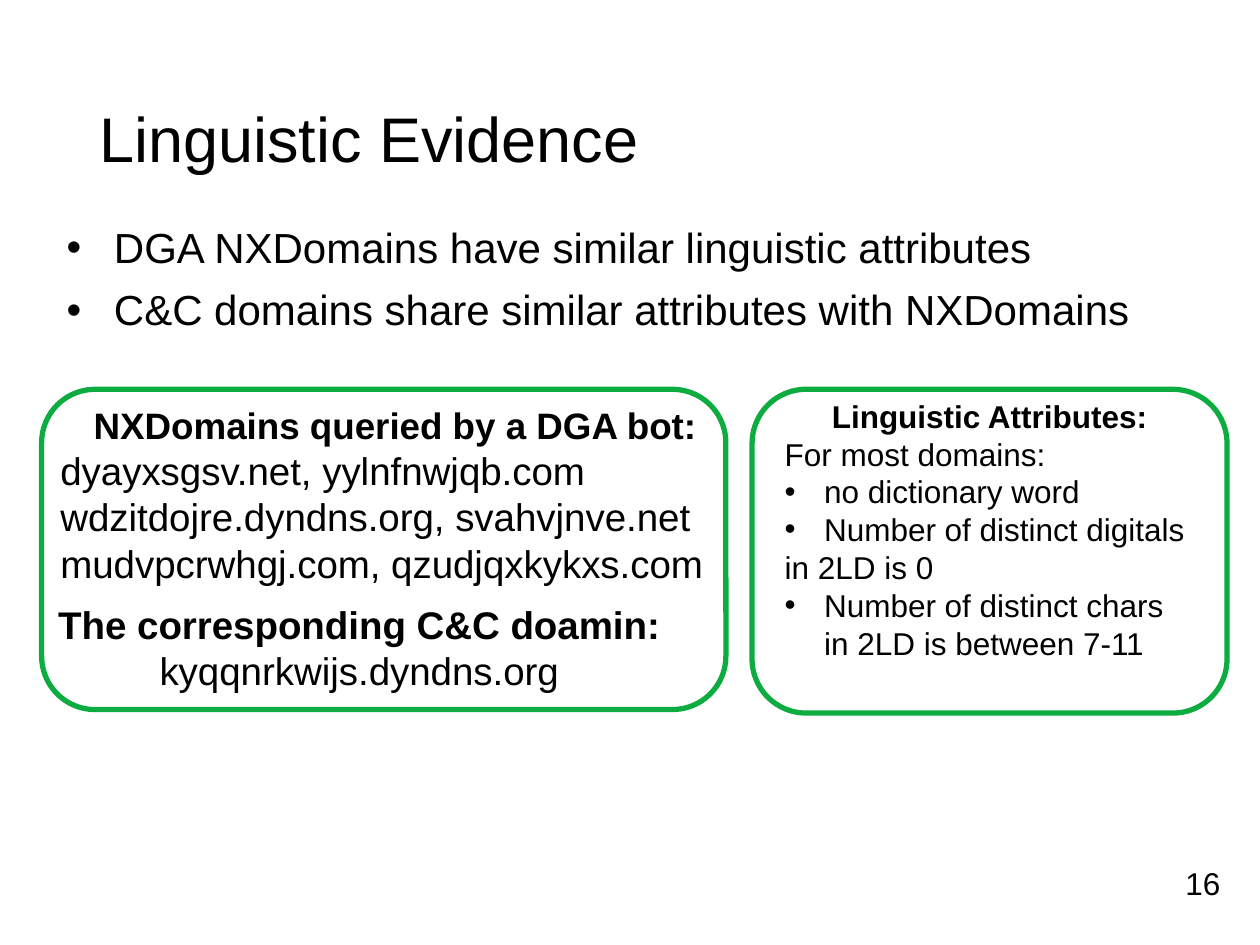
from dataclasses import dataclass

from lxml.etree import SubElement
from pptx import Presentation
from pptx.dml.color import RGBColor
from pptx.enum.shapes import MSO_SHAPE as Preset
from pptx.enum.text import MSO_ANCHOR as Anchor, PP_ALIGN as Align
from pptx.oxml.ns import qn
from pptx.util import Pt


@dataclass(frozen=True)
class Theme:
    font: str = "Arial"
    ink: RGBColor = RGBColor(0, 0, 0)
    green: RGBColor = RGBColor(0x0D, 0xAC, 0x40)
    title: float = 36
    body: float = 24
    domain: float = 22
    heading: float = 21
    small: float = 18
    border: float = 3


THEME = Theme()


def set_bullet(para, indent):
    props = para._p.get_or_add_pPr()
    props.set("marL", str(Pt(indent)))
    props.set("indent", str(-Pt(indent)))
    SubElement(props, qn("a:buFont"), typeface=THEME.font)
    SubElement(props, qn("a:buChar"), char="•")


def add_text(page, box, lines, wrap=True, anchor=Anchor.TOP):
    """Each line is (text, size, options); options may hold bold, bullet and paragraph format."""
    frame = page.shapes.add_textbox(*map(Pt, box)).text_frame
    frame.word_wrap = wrap
    frame.vertical_anchor = anchor
    for index, (text, size, options) in enumerate(lines):
        layout = dict(options)
        bold = layout.pop("bold", False)
        indent = layout.pop("bullet", None)
        para = frame.add_paragraph() if index else frame.paragraphs[0]
        for name, value in layout.items():
            setattr(para, name, value)
        if indent:
            set_bullet(para, indent)
        span = para.add_run()
        span.text = text
        for name, value in dict(name=THEME.font, size=Pt(size), bold=bold).items():
            setattr(span.font, name, value)
        span.font.color.rgb = THEME.ink


def add_panel(page, box):
    panel = page.shapes.add_shape(Preset.ROUNDED_RECTANGLE, *map(Pt, box))
    panel.shadow.inherit = False
    panel.fill.background()
    panel.line.color.rgb = THEME.green
    panel.line.width = Pt(THEME.border)


def add_title(page, box):
    add_text(page, box, [("Linguistic Evidence", THEME.title, dict(line_spacing=0.9))],
             anchor=Anchor.MIDDLE)


def add_points(page, box):
    first = dict(line_spacing=0.9, bullet=27)
    add_text(page, box, [
        ("DGA NXDomains have similar linguistic attributes", THEME.body, first),
        ("C&C domains share similar attributes with NXDomains", THEME.body,
         dict(first, space_before=Pt(10))),
    ])


def add_domains(page, box):
    left, top, width, height = box
    heading = dict(alignment=Align.CENTER, bold=True)
    add_panel(page, box)

    # Queried names
    names = ["dyayxsgsv.net, yylnfnwjqb.com",
             "wdzitdojre.dyndns.org, svahvjnve.net",
             "mudvpcrwhgj.com, qzudjqxkykxs.com"]
    add_text(page, (left + 3.6, top + 4.3, width + 5.7, 113),
             [("NXDomains queried by a DGA bot:", THEME.heading, heading)]
             + [(name, THEME.domain, {}) for name in names])

    # Matching control domain
    add_text(page, (left, top + 117.4, width - 28, 60.5), [
        ("The corresponding C&C doamin:", THEME.domain, heading),
        ("kyqqnrkwijs.dyndns.org", THEME.domain, dict(alignment=Align.CENTER)),
    ], wrap=False)


def add_attributes(page, box):
    left, top, width, height = box
    item = dict(bullet=22.5)
    add_panel(page, box)
    lines = [
        ("Linguistic Attributes:", dict(alignment=Align.CENTER, bold=True)),
        ("For most domains:", {}),
        ("no dictionary word", item),
        ("Number of distinct digitals", item),
        ("in 2LD is 0", {}),
        ("Number of distinct chars in 2LD is between 7-11", item),
    ]
    add_text(page, (left + 11.5, top + 0.7, width - 23, 160),
             [(text, THEME.small, options) for text, options in lines])


def add_page_number(page, box):
    add_text(page, box, [("16", THEME.small, {})], wrap=False)


def main():
    deck = Presentation()
    deck.slide_width, deck.slide_height = Pt(720), Pt(540)
    page = deck.slides.add_slide(deck.slide_layouts[6])
    add_title(page, (49.7, 28.8, 620.6, 104.4))
    add_points(page, (31, 126, 672, 398))
    add_domains(page, (23.8, 222.5, 391, 183))
    add_attributes(page, (429.8, 222.5, 271.4, 185))
    add_page_number(page, (670.3, 490.3, 34.6, 28.8))
    deck.save("out.pptx")


if __name__ == "__main__":
    main()
